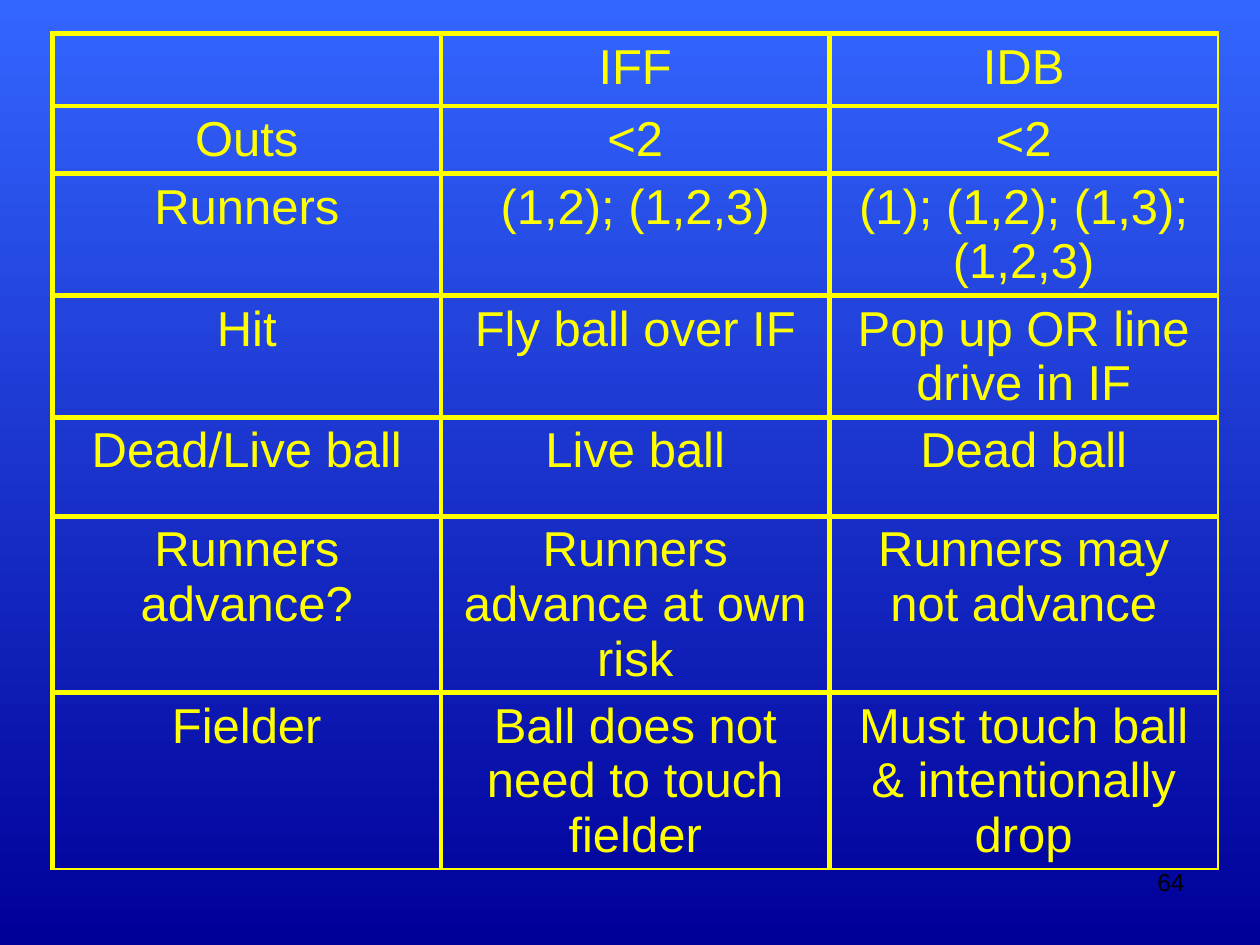
from dataclasses import dataclass

from lxml.etree import SubElement
from pptx import Presentation
from pptx.dml.color import RGBColor
from pptx.enum.text import PP_ALIGN
from pptx.oxml.ns import qn
from pptx.util import Pt


@dataclass(frozen=True)
class Theme:
    font: str = "Arial"
    sky: str = "3366FF"
    navy: str = "000099"
    yellow: str = "FFFF00"
    black: str = "000000"
    table_size: float = 28
    number_size: float = 14
    thick_line: float = 3
    thin_line: float = 1


THEME = Theme()
COLUMN_WIDTH = 222
ROW_HEIGHTS = [38.5, 38.5, 69.7, 69.7, 56.5, 100.8, 100.8]
RULES = [
    ["", "IFF", "IDB"],
    ["Outs", "<2", "<2"],
    ["Runners", "(1,2); (1,2,3)", "(1); (1,2); (1,3); (1,2,3)"],
    ["Hit", "Fly ball over IF", "Pop up OR line drive in IF"],
    ["Dead/Live ball", "Live ball", "Dead ball"],
    ["Runners advance?", "Runners advance at own risk", "Runners may not advance"],
    ["Fielder", "Ball does not need to touch fielder",
     "Must touch ball & intentionally drop"],
]


def write_text(frame, text, size, color, align):
    frame.word_wrap = True
    para = frame.paragraphs[0]
    para.alignment = align
    para.font.size = Pt(size)
    if not text:
        return
    span = para.add_run()
    span.text = text
    span.font.name = THEME.font
    span.font.size = Pt(size)
    span.font.color.rgb = RGBColor.from_string(color)


def paint_background(page):
    fill = page.background.fill
    fill.gradient()
    fill.gradient_angle = 270
    for stop, color, position in zip(fill.gradient_stops, (THEME.sky, THEME.navy), (0, 1)):
        stop.color.rgb = RGBColor.from_string(color)
        stop.position = position


def set_borders(cell, widths):
    properties = cell._tc.get_or_add_tcPr()
    for index, (side, width) in enumerate(widths.items()):
        line = SubElement(properties, qn(f"a:ln{side}"), w=str(Pt(width)))
        fill = SubElement(line, qn("a:solidFill"))
        SubElement(fill, qn("a:srgbClr"), val=THEME.yellow)
        properties.insert(index, line)


def add_rules_table(page, left, top):
    row_count, column_count = len(RULES), len(RULES[0])
    table = page.shapes.add_table(
        row_count, column_count, Pt(left), Pt(top),
        Pt(COLUMN_WIDTH * column_count), Pt(sum(ROW_HEIGHTS))).table
    table.first_row = table.horz_banding = False
    for column in table.columns:
        column.width = Pt(COLUMN_WIDTH)
    for row_index, (texts, height) in enumerate(zip(RULES, ROW_HEIGHTS)):
        table.rows[row_index].height = Pt(height)
        for column_index, text in enumerate(texts):
            cell = table.cell(row_index, column_index)
            cell.fill.background()
            last_column = column_index == column_count - 1
            last_row = row_index == row_count - 1
            set_borders(cell, {
                "L": THEME.thick_line,
                "R": THEME.thin_line if last_column else THEME.thick_line,
                "T": THEME.thick_line,
                "B": THEME.thin_line if last_row else THEME.thick_line,
            })
            write_text(cell.text_frame, text, size=THEME.table_size,
                       color=THEME.yellow, align=PP_ALIGN.CENTER)


def add_page_number(page, number, left, top, width, height):
    box = page.shapes.add_textbox(Pt(left), Pt(top), Pt(width), Pt(height))
    write_text(box.text_frame, number, size=THEME.number_size,
               color=THEME.black, align=PP_ALIGN.RIGHT)


def main():
    deck = Presentation()
    deck.slide_width, deck.slide_height = Pt(720), Pt(540)
    page = deck.slides.add_slide(deck.slide_layouts[6])
    paint_background(page)
    add_rules_table(page, left=30, top=19.2)
    add_page_number(page, "64", left=516, top=492, width=168, height=37.5)
    deck.save("out.pptx")


if __name__ == "__main__":
    main()
